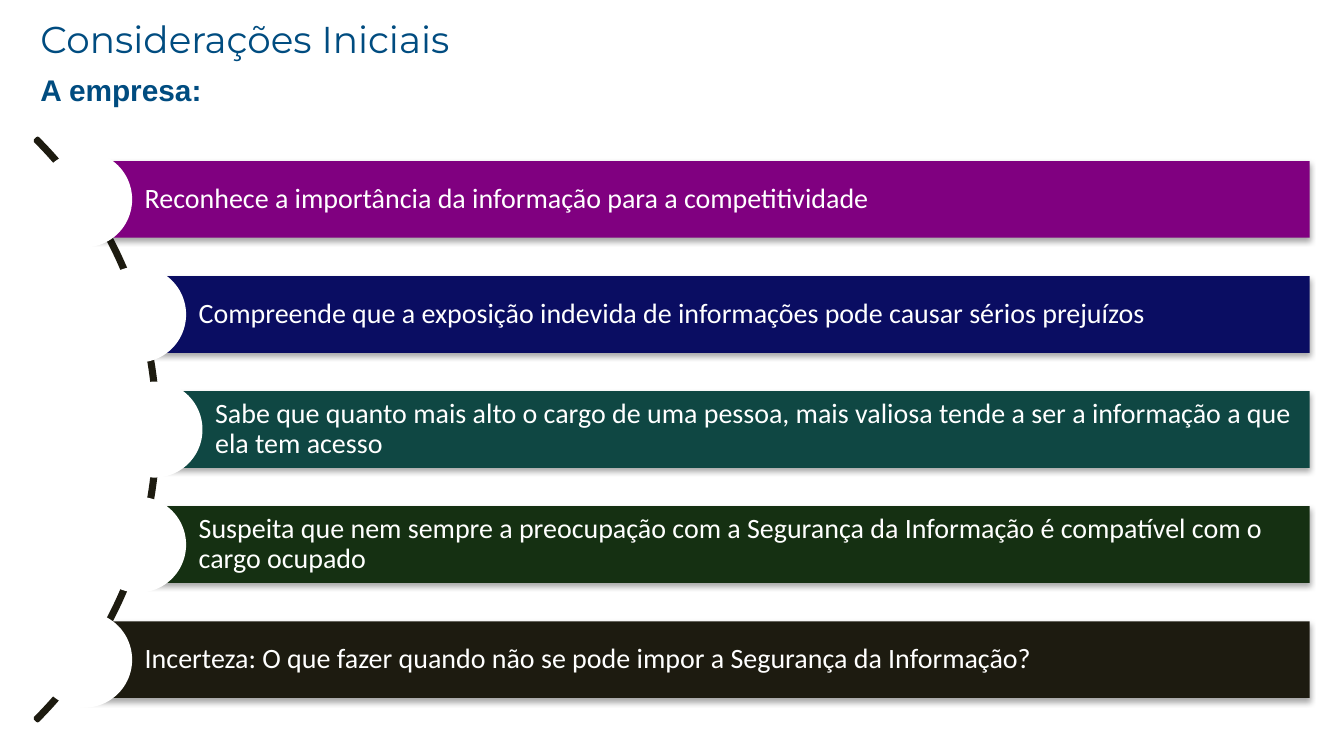
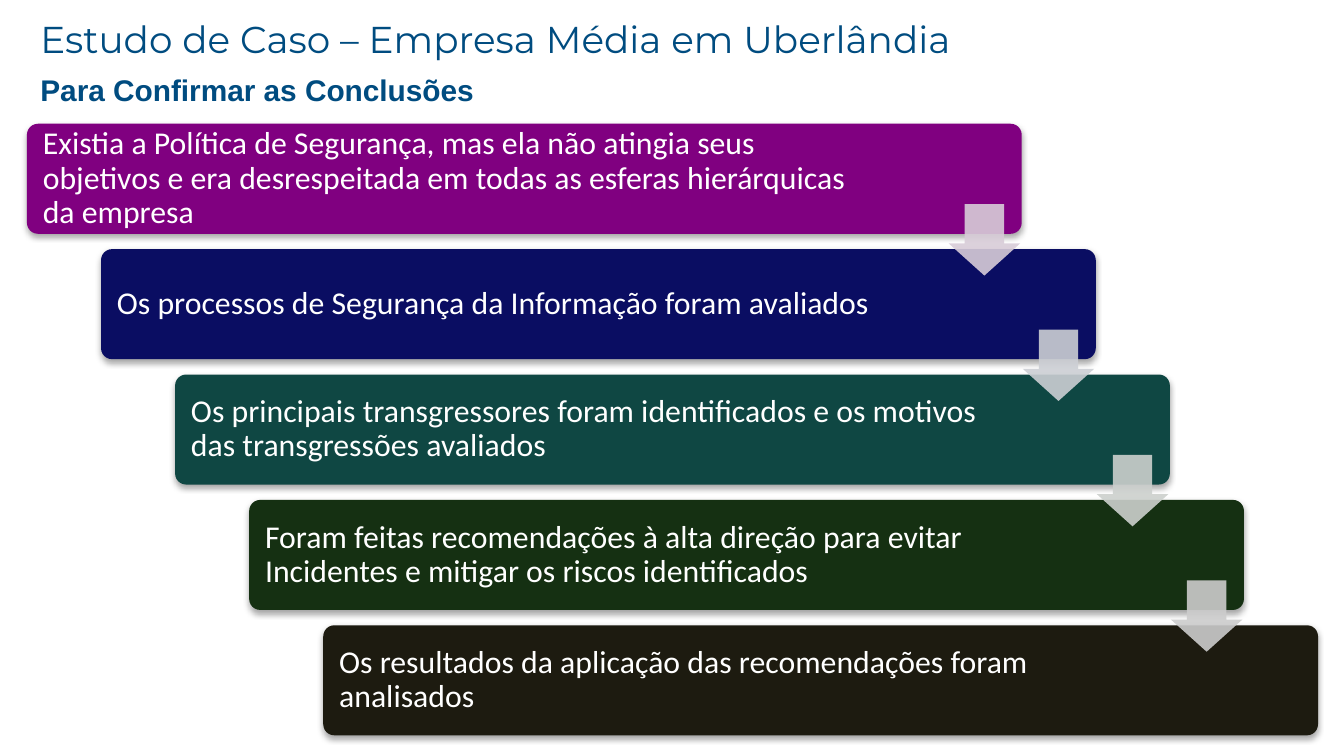
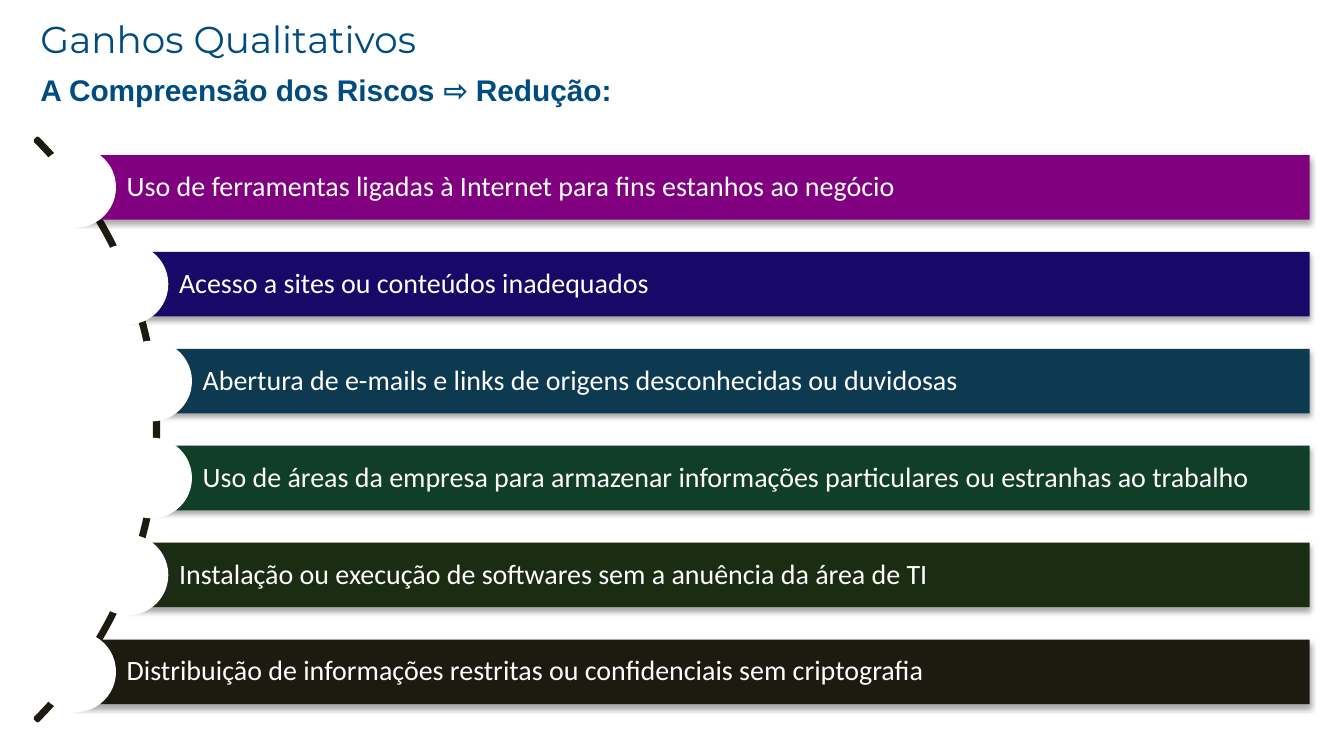
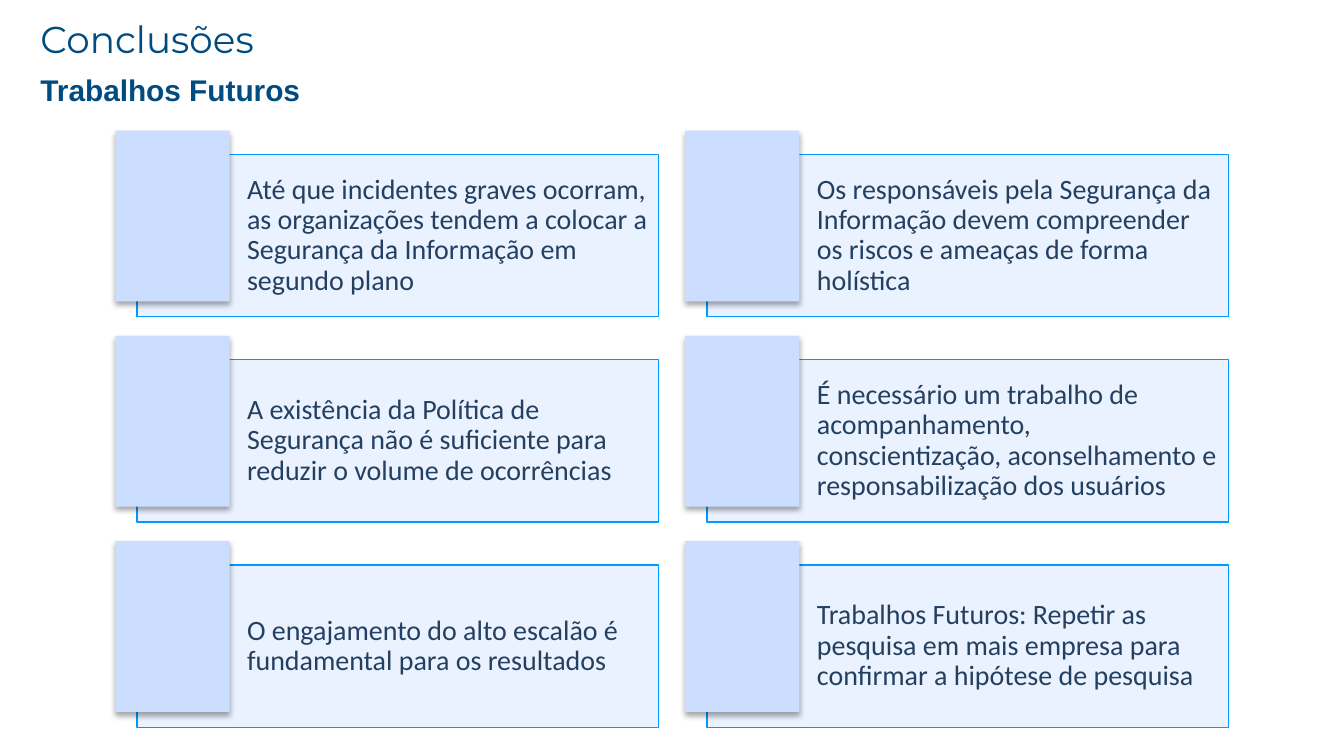
import math

import lxml.etree
import pptx
import pptx.dml.color
import pptx.enum.shapes
import pptx.enum.text
import pptx.oxml.ns
import pptx.util

Cm = pptx.util.Cm
Pt = pptx.util.Pt
RGBColor = pptx.dml.color.RGBColor
Shape = pptx.enum.shapes.MSO_SHAPE
qn = pptx.oxml.ns.qn

HEADING_BLUE = RGBColor(0x00, 0x4C, 0x80)
WHITE = RGBColor(0xFF, 0xFF, 0xFF)
PURPLE = RGBColor(0x80, 0x00, 0x80)
NAVY = RGBColor(0x0A, 0x0D, 0x62)
INDIGO = RGBColor(0x18, 0x08, 0x67)
TEAL = RGBColor(0x0F, 0x47, 0x43)
PETROL = RGBColor(0x0D, 0x3A, 0x51)
EMERALD = RGBColor(0x11, 0x3E, 0x27)
FOREST = RGBColor(0x15, 0x30, 0x12)
OLIVE = RGBColor(0x1A, 0x2C, 0x12)
NEAR_BLACK = RGBColor(0x1D, 0x1B, 0x10)
PALE_BLUE = RGBColor(0xCC, 0xDE, 0xFF)
CARD_LINE = RGBColor(0x00, 0x99, 0xFF)
CARD_TEXT = RGBColor(0x24, 0x40, 0x61)
ARROW_COLORS = [
    RGBColor(0xD8, 0xCC, 0xD8),
    RGBColor(0xCC, 0xCF, 0xD4),
    RGBColor(0xCC, 0xD0, 0xCD),
    RGBColor(0xCC, 0xCC, 0xCC),
]

COMPANY = [
    ("Reconhece a importância da informação para a competitividade", PURPLE),
    ("Compreende que a exposição indevida de informações pode causar sérios prejuízos", NAVY),
    ("Sabe que quanto mais alto o cargo de uma pessoa, mais valiosa tende a ser "
     "a informação a que ela tem acesso", TEAL),
    ("Suspeita que nem sempre a preocupação com a Segurança da Informação é "
     "compatível com o cargo ocupado", FOREST),
    ("Incerteza: O que fazer quando não se pode impor a Segurança da Informação?", NEAR_BLACK),
]
CASE_STEPS = [
    ("Existia a Política de Segurança, mas ela não atingia seus objetivos e era "
     "desrespeitada em todas as esferas hierárquicas da empresa", PURPLE, 2.62),
    ("Os processos de Segurança da Informação foram avaliados", NAVY, 3),
    ("Os principais transgressores foram identificados e os motivos das "
     "transgressões avaliados", TEAL, 3),
    ("Foram feitas recomendações à alta direção para evitar Incidentes e mitigar "
     "os riscos identificados", FOREST, 3),
    ("Os resultados da aplicação das recomendações foram analisados", NEAR_BLACK, 3),
]
REDUCTIONS = [
    ("Uso de ferramentas ligadas à Internet para fins estanhos ao negócio", PURPLE),
    ("Acesso a sites ou conteúdos inadequados", INDIGO),
    ("Abertura de e-mails e links de origens desconhecidas ou duvidosas", PETROL),
    ("Uso de áreas da empresa para armazenar informações particulares ou "
     "estranhas ao trabalho", EMERALD),
    ("Instalação ou execução de softwares sem a anuência da área de TI", OLIVE),
    ("Distribuição de informações restritas ou confidenciais sem criptografia", NEAR_BLACK),
]
CONCLUSIONS = [
    "Até que incidentes graves ocorram, as organizações tendem a colocar a "
    "Segurança da Informação em segundo plano",
    "Os responsáveis pela Segurança da Informação devem compreender os riscos e "
    "ameaças de forma holística",
    "A existência da Política de Segurança não é suficiente para reduzir o volume "
    "de ocorrências",
    "É necessário um trabalho de acompanhamento, conscientização, aconselhamento e "
    "responsabilização dos usuários",
    "O engajamento do alto escalão é fundamental para os resultados",
    "Trabalhos Futuros: Repetir as pesquisa em mais empresa para confirmar a "
    "hipótese de pesquisa",
]

ARC_X, ARC_Y, ARC_RADIUS = -4.79, 8.12, 7.78
LIST_HEIGHT, LIST_RIGHT = 11.6, 24.75


def add_box(slide, kind, left, top, width, height, fill=None, alpha=None,
            line=None, line_width=0.75, shadow=False):
    shape = slide.shapes.add_shape(kind, Cm(left), Cm(top), Cm(width), Cm(height))
    shape.shadow.inherit = False
    if fill is None:
        shape.fill.background()
    else:
        shape.fill.solid()
        shape.fill.fore_color.rgb = fill
    if alpha is not None:
        color = shape.element.spPr.find(qn("a:solidFill")).find(qn("a:srgbClr"))
        lxml.etree.SubElement(color, qn("a:alpha"), val=str(alpha * 1000))
    if line is None:
        shape.line.fill.background()
    else:
        shape.line.color.rgb = line
        shape.line.width = Pt(line_width)
    if shadow:
        effects = shape.element.spPr.find(qn("a:effectLst"))
        outer = lxml.etree.SubElement(
            effects, qn("a:outerShdw"), blurRad=str(Pt(3.1)), dist=str(Pt(1.8)),
            dir="5400000", rotWithShape="0")
        color = lxml.etree.SubElement(outer, qn("a:srgbClr"), val="000000")
        lxml.etree.SubElement(color, qn("a:alpha"), val="35000")
    return shape


def format_text(paragraph, font_name, size, color, bold=False):
    paragraph.alignment = pptx.enum.text.PP_ALIGN.LEFT
    for run in paragraph.runs:
        run.font.name = font_name
        run.font.size = Pt(size)
        run.font.bold = bold
        run.font.color.rgb = color


def write(shape, text, size, color, left, right, vertical):
    frame = shape.text_frame
    frame.text = text
    frame.word_wrap = True
    frame.vertical_anchor = pptx.enum.text.MSO_ANCHOR.MIDDLE
    frame.margin_left, frame.margin_right = Cm(left), Cm(right)
    frame.margin_top = frame.margin_bottom = Cm(vertical)
    paragraph = frame.paragraphs[0]
    paragraph.line_spacing = 0.9
    format_text(paragraph, "Calibri", size, color)


def fill_heading(placeholder, text, top, height, font_name, size, bold):
    placeholder.left, placeholder.top = Cm(0.51), Cm(top)
    placeholder.width, placeholder.height = Cm(21), Cm(height)
    frame = placeholder.text_frame
    frame.text = text
    frame.auto_size = pptx.enum.text.MSO_AUTO_SIZE.NONE
    frame.vertical_anchor = pptx.enum.text.MSO_ANCHOR.MIDDLE
    paragraph = frame.paragraphs[0]
    paragraph.space_before = Pt(0)
    properties = paragraph._p.get_or_add_pPr()
    properties.set("marL", "0")
    properties.set("indent", "0")
    lxml.etree.SubElement(properties, qn("a:buNone"))
    format_text(paragraph, font_name, size, HEADING_BLUE, bold)


def add_slide(presentation, title, subtitle):
    slide = presentation.slides.add_slide(presentation.slide_layouts[1])
    fill_heading(slide.shapes.title, title, 0.28, 0.89, "Montserrat", 20, False)
    fill_heading(slide.placeholders[1], subtitle, 1.35, 0.69, "Arial", 16, True)
    return slide


def add_curved_list(slide, items):
    arc = add_box(slide, Shape.BLOCK_ARC, ARC_X - ARC_RADIUS, ARC_Y - ARC_RADIUS,
                  2 * ARC_RADIUS, 2 * ARC_RADIUS, line=NEAR_BLACK, line_width=2)
    for index, value in enumerate((189, 27, 0.004)):
        arc.adjustments[index] = value
    height = LIST_HEIGHT / (1.5 * len(items) + 0.5)
    diameter = 1.25 * height
    for index, (text, color) in enumerate(items):
        offset = 1.5 * height * (index - (len(items) - 1) / 2)
        middle = ARC_Y + offset
        left = ARC_X + math.sqrt(ARC_RADIUS ** 2 - offset ** 2) - 0.07
        bar = add_box(slide, Shape.RECTANGLE, left, middle - height / 2,
                      LIST_RIGHT - left, height, color, shadow=True)
        write(bar, text, 15, WHITE, 0.79 * height, 0.1, 0.1)
        add_box(slide, Shape.OVAL, left - diameter / 2, middle - diameter / 2,
                diameter, diameter, WHITE)


def add_staircase(slide, steps):
    corners = [(0.51 + 1.4 * index, 2.34 + 2.37 * index) for index in range(len(steps))]
    for (left, top), (text, color, right_margin) in zip(corners, steps):
        step = add_box(slide, Shape.ROUNDED_RECTANGLE, left, top, 18.8, 2.08, color, shadow=True)
        step.adjustments[0] = 0.1
        write(step, text, 17, WHITE, 0.24, right_margin, 0.24)
    for (left, top), color in zip(corners, ARROW_COLORS):
        arrow = add_box(slide, Shape.DOWN_ARROW, left + 17.42, top + 1.52, 1.35, 1.35,
                        color, alpha=90)
        arrow.adjustments[0], arrow.adjustments[1] = 0.55, 0.45


def add_card_grid(slide, texts):
    for index, text in enumerate(texts):
        row, column = divmod(index, 2)
        left, top = 2.59 + 10.77 * column, 2.92 + 3.88 * row
        card = add_box(slide, Shape.RECTANGLE, left, top, 9.86, 3.07,
                       PALE_BLUE, alpha=40, line=CARD_LINE)
        write(card, text, 15, CARD_TEXT, 2.08, 0.15, 0.15)
        add_box(slide, Shape.RECTANGLE, left - 0.41, top - 0.45, 2.16, 3.23,
                PALE_BLUE, shadow=True)


SLIDES = [
    ("Considerações Iniciais", "A empresa:", add_curved_list, COMPANY),
    ("Estudo de Caso – Empresa Média em Uberlândia", "Para Confirmar as Conclusões",
     add_staircase, CASE_STEPS),
    ("Ganhos Qualitativos", "A Compreensão dos Riscos ⇨ Redução:",
     add_curved_list, REDUCTIONS),
    ("Conclusões", "Trabalhos Futuros", add_card_grid, CONCLUSIONS),
]


def main():
    presentation = pptx.Presentation()
    presentation.slide_width, presentation.slide_height = Cm(25.4), Cm(14.29)
    for title, subtitle, add_content, content in SLIDES:
        add_content(add_slide(presentation, title, subtitle), content)
    presentation.save("out.pptx")


if __name__ == "__main__":
    main()
